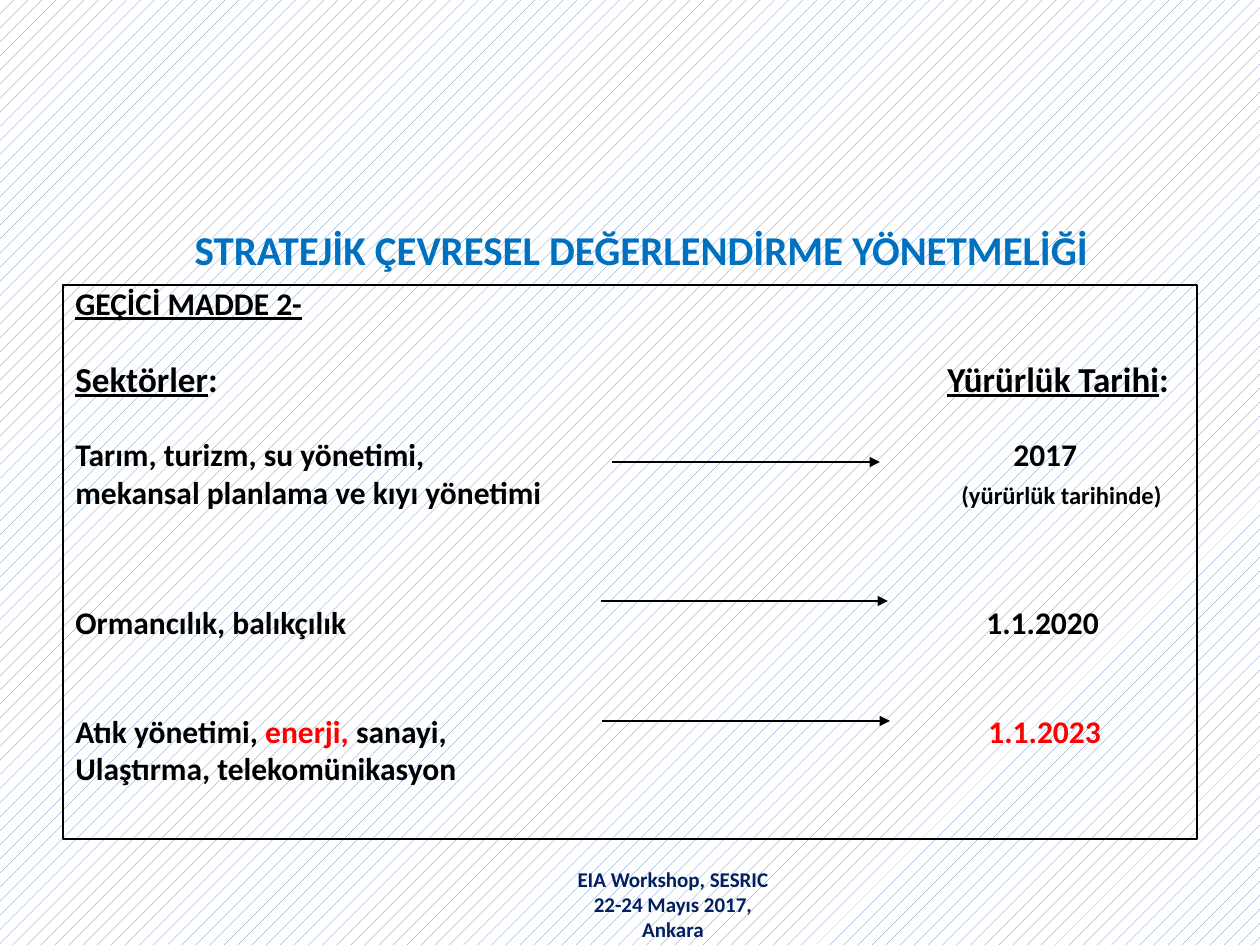
"""Build the slide on effective dates by sector in the strategic assessment regulation."""
from lxml import etree
from pptx import Presentation
from pptx import util as u
from pptx.dml.color import RGBColor
from pptx.enum import dml, shapes, text
from pptx.oxml.ns import qn

THEME = {
    "font": "Calibri",
    "ink": "000000", "accent": "FF0000", "title": "0070C0", "footer": "002060",
    "pattern": "4F81BD", "paper": "FFFFFF",
    "title_size": 23.4, "head_size": 20, "body_size": 18, "note_size": 14, "footer_size": 12,
}
BODY = {"size": THEME["body_size"], "color": THEME["ink"]}
HEAD = {**BODY, "size": THEME["head_size"]}
NOTE = {**BODY, "size": THEME["note_size"]}
RED = {**BODY, "color": THEME["accent"]}
TITLE = {"size": THEME["title_size"], "color": THEME["title"]}
FOOTER = {"size": THEME["footer_size"], "color": THEME["footer"]}
LINED = {"underline": True}

TITLE_BOX = (57, 215, 1169, 69)
BODY_BOX = (63, 285, 1134, 554)
FOOTER_BOX = (551, 871, 244, 66)

TITLE_ROWS = [(0, None, [("STRATEJİK ÇEVRESEL DEĞERLENDİRME YÖNETMELİĞİ", TITLE)])]
# Each row: space before in points, tab stop in px, runs.
BODY_ROWS = [
    (0, None, [("GEÇİCİ MADDE 2-", {**BODY, **LINED})]),
    (25, 872, [("Sektörler", {**HEAD, **LINED}), (":\t", HEAD),
               ("Yürürlük Tarihi", {**HEAD, **LINED}), (":", HEAD)]),
    (25, 938, [("Tarım, turizm, su yönetimi,\t2017", BODY)]),
    (4, 886, [("mekansal planlama ve kıyı yönetimi\t", BODY), ("(yürürlük tarihinde)", NOTE)]),
    (57, 911, [("Ormancılık, balıkçılık\t1.1.2020", BODY)]),
    (45, 913, [("Atık yönetimi, ", BODY), ("enerji, ", RED), ("sanayi,\t", BODY),
               ("1.1.2023", RED)]),
    (4, None, [("Ulaştırma, telekomünikasyon", BODY)]),
]
FOOTER_ROWS = [(0, None, [("EIA Workshop, SESRIC", FOOTER)]),
               (0, None, [("22-24 Mayıs 2017, Ankara", FOOTER)])]
ARROWS = [(612, 880, 462), (601, 888, 601), (602, 890, 721)]


def px(n):
    return u.Emu(round(n * 914400 / 126))


def rgb(code):
    return RGBColor.from_string(code)


def write(sp, rows, anchor, align, spacing=1.0):
    tf = sp.text_frame
    for key, value in {"word_wrap": True, "auto_size": text.MSO_AUTO_SIZE.NONE,
                       "vertical_anchor": anchor}.items():
        setattr(tf, key, value)
    for i, (before, stop, runs) in enumerate(rows):
        p = tf.add_paragraph() if i else tf.paragraphs[0]
        if stop:
            tabs = etree.SubElement(p._p.get_or_add_pPr(), qn("a:tabLst"))
            etree.SubElement(tabs, qn("a:tab"), pos=str(px(stop)), algn="l")
        for key, value in {"alignment": align, "line_spacing": spacing,
                           "space_before": u.Pt(before)}.items():
            setattr(p, key, value)
        for words, style in runs:
            r = p.add_run()
            r.text = words
            for key, value in {"name": THEME["font"], "size": u.Pt(style["size"]), "bold": True,
                               "underline": style.get("underline", False)}.items():
                setattr(r.font, key, value)
            r.font.color.rgb = rgb(style["color"])


def outline(line):
    line.color.rgb = rgb(THEME["ink"])
    line.width = u.Pt(0.75)


def add_arrow(s, left, right, y):
    sp = s.shapes.add_connector(shapes.MSO_CONNECTOR.STRAIGHT, px(left), px(y), px(right), px(y))
    outline(sp.line)
    etree.SubElement(sp.line._get_or_add_ln(), qn("a:tailEnd"), type="triangle")
    etree.SubElement(sp._element.spPr, qn("a:effectLst"))


def main():
    prs = Presentation()
    prs.slide_width, prs.slide_height = px(1260), px(945)
    s = prs.slides.add_slide(prs.slide_layouts[5])
    fill = s.background.fill
    fill.patterned()
    fill.pattern = dml.MSO_PATTERN.PERCENT_10
    fill.fore_color.rgb = rgb(THEME["pattern"])
    fill.back_color.rgb = rgb(THEME["paper"])

    middle, center = text.MSO_ANCHOR.MIDDLE, text.PP_ALIGN.CENTER
    title = s.shapes.title
    for key, value in zip(("left", "top", "width", "height"), TITLE_BOX):
        setattr(title, key, px(value))
    write(title, TITLE_ROWS, middle, center)

    body = s.shapes.add_shape(shapes.MSO_SHAPE.RECTANGLE, *map(px, BODY_BOX))
    body.shadow.inherit = False
    body.fill.background()
    outline(body.line)
    write(body, BODY_ROWS, text.MSO_ANCHOR.TOP, text.PP_ALIGN.LEFT, 0.8)

    for arrow in ARROWS:
        add_arrow(s, *arrow)
    write(s.shapes.add_textbox(*map(px, FOOTER_BOX)), FOOTER_ROWS, middle, center)
    prs.save("out.pptx")


if __name__ == "__main__":
    main()
